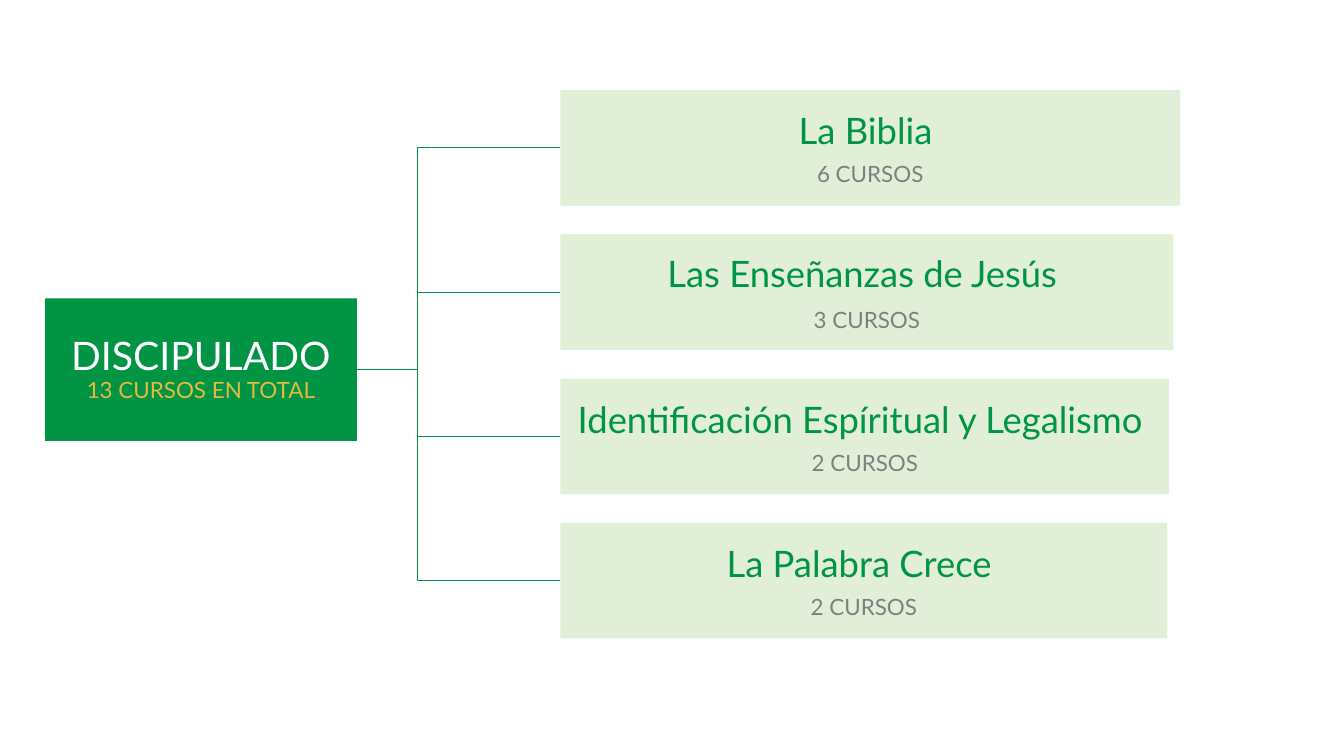
from pptx import Presentation
from pptx.dml.color import RGBColor
from pptx.enum.shapes import MSO_SHAPE as SHAPE
from pptx.enum.text import MSO_ANCHOR as ANCHOR, PP_ALIGN as ALIGN
from pptx.util import Inches, Pt

COLORS = {
    "green": "009444",
    "pale": "E1EFD8",
    "white": "FFFFFF",
    "gold": "E3BB3D",
    "gray": "7F7F7F",
}
FONT = "Lato"
ROOT_LEFT, ROOT_TOP, ROOT_W, ROOT_H = 0.67, 4.44, 4.64, 2.12
TRUNK_START, TRUNK_X = 4.09, 6.21
TOPIC_LEFT, TOPIC_TOP, TOPIC_H, TOPIC_STEP = 8.34, 1.34, 1.72, 2.147
TOPICS = [
    ("La Biblia ", "6 CURSOS", 9.22, 0.9),
    ("Las Enseñanzas de Jesús ", "3 CURSOS", 9.12, 1.0),
    ("Identificación Espíritual y Legalismo ", "2 CURSOS", 9.06, 0.9),
    ("La Palabra Crece ", "2 CURSOS", 9.03, 0.9),
]


def rgb(name):
    return RGBColor.from_string(COLORS[name])


def add_run(p, text, size, color):
    r = p.add_run()
    r.text = text
    r.font.name = FONT
    r.font.size = Pt(size)
    r.font.color.rgb = rgb(color)


def add_box(s, left, top, width, height, fill):
    sp = s.shapes.add_shape(
        SHAPE.RECTANGLE, Inches(left), Inches(top), Inches(width), Inches(height)
    )
    sp.shadow.inherit = False
    sp.fill.solid()
    sp.fill.fore_color.rgb = rgb(fill)
    sp.line.fill.background()
    tf = sp.text_frame
    tf.word_wrap = True
    tf.vertical_anchor = ANCHOR.MIDDLE
    tf.margin_left = tf.margin_right = Inches(0.03)
    tf.margin_top = tf.margin_bottom = Inches(0.03)
    tf.paragraphs[0].alignment = ALIGN.CENTER
    return tf


def add_branch(s, start_y, end_y):
    points = [(TRUNK_X, start_y), (TRUNK_X, end_y), (TOPIC_LEFT, end_y)]
    builder = s.shapes.build_freeform(Inches(TRUNK_START), Inches(start_y))
    builder.add_line_segments([(Inches(x), Inches(y)) for x, y in points], close=False)
    sp = builder.convert_to_shape()
    sp.shadow.inherit = False
    sp.fill.background()
    sp.line.color.rgb = rgb("green")
    sp.line.width = Pt(1)


def add_root(s):
    tf = add_box(s, ROOT_LEFT, ROOT_TOP, ROOT_W, ROOT_H, "green")
    p = tf.paragraphs[0]
    p.line_spacing = 0.9
    add_run(p, "DISCIPULADO", 42, "white")
    p.add_line_break()
    add_run(p, "13 CURSOS EN TOTAL", 24, "gold")


def add_topic(s, top, name, courses, width, spacing):
    tf = add_box(s, TOPIC_LEFT, top, width, TOPIC_H, "pale")
    add_run(tf.paragraphs[0], name, 39, "green")
    p = tf.add_paragraph()
    p.alignment = ALIGN.CENTER
    p.line_spacing = spacing
    p.space_before = Pt(12)
    add_run(p, courses, 24, "gray")


def main():
    prs = Presentation()
    prs.slide_width, prs.slide_height = Inches(20), Inches(11.25)
    s = prs.slides.add_slide(prs.slide_layouts[6])
    tops = [TOPIC_TOP + i * TOPIC_STEP for i in range(len(TOPICS))]
    for top in reversed(tops):
        add_branch(s, ROOT_TOP + ROOT_H / 2, top + TOPIC_H / 2)
    add_root(s)
    for top, topic in zip(tops, TOPICS):
        add_topic(s, top, *topic)
    prs.save("out.pptx")


if __name__ == "__main__":
    main()
